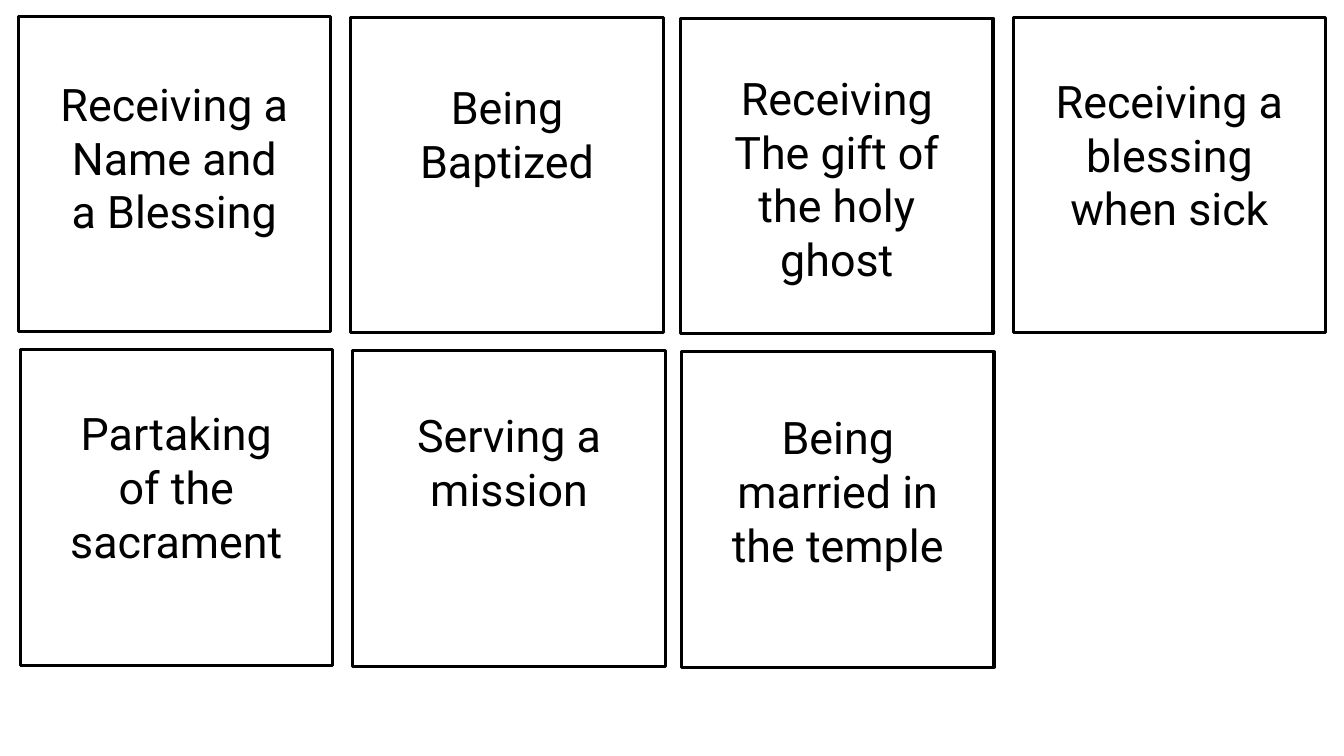
"""Build a slide of seven square cards naming church ordinances and milestones."""
from dataclasses import dataclass

from pptx import Presentation
from pptx.dml.color import RGBColor
from pptx.enum.shapes import MSO_SHAPE
from pptx.enum.text import MSO_AUTO_SIZE, PP_ALIGN
from pptx.util import Inches, Pt

RECTANGLE = MSO_SHAPE.RECTANGLE
GROW = MSO_AUTO_SIZE.SHAPE_TO_FIT_TEXT
CENTER = PP_ALIGN.CENTER


@dataclass(frozen=True)
class Theme:
    """Colours, font and sizes of the cards."""
    ink: RGBColor = RGBColor(0, 0, 0)
    font: str = "Roboto"
    label_size: Pt = Pt(32)
    border: Pt = Pt(2.25)


theme = Theme()
CARD_WIDTH, CARD_HEIGHT = 3.1, 3.13
LINE_HEIGHT, TEXT_PADDING = 0.54, 0.1

# label, card left, card top, label top, label width, label lines
cards = [
    ("Receiving a Name and a Blessing", 0.18, 0.16, 0.71, 2.56, 3),
    ("Being Baptized", 3.48, 0.17, 0.74, 2.56, 2),
    ("Receiving The gift of the holy ghost", 6.75, 0.18, 0.65, 2.78, 4),
    ("Receiving a blessing when sick", 10.05, 0.17, 0.68, 2.56, 3),
    ("Partaking of the sacrament", 0.2, 3.47, 3.98, 2.56, 3),
    ("Serving a mission", 3.5, 3.48, 4, 2.56, 2),
    ("Being married in the temple", 6.76, 3.49, 4.02, 2.56, 4),
]

presentation = Presentation()
presentation.slide_width = Inches(13.33)
presentation.slide_height = Inches(7.5)
slide = presentation.slides.add_slide(presentation.slide_layouts[6])

for _, left, top, *_ in cards:
    card = slide.shapes.add_shape(
        RECTANGLE, Inches(left), Inches(top), Inches(CARD_WIDTH), Inches(CARD_HEIGHT))
    card.shadow.inherit = False
    card.fill.background()
    card.line.color.rgb = theme.ink
    card.line.width = theme.border

for wording, left, _, label_top, label_width, lines in cards:
    label_left = left + (CARD_WIDTH - label_width) / 2
    label = slide.shapes.add_textbox(
        Inches(label_left), Inches(label_top),
        Inches(label_width), Inches(TEXT_PADDING + LINE_HEIGHT * lines))
    label.text_frame.word_wrap = True
    label.text_frame.auto_size = GROW
    paragraph = label.text_frame.paragraphs[0]
    paragraph.alignment = CENTER
    run = paragraph.add_run()
    run.text = wording
    run.font.color.rgb = theme.ink
    for attribute, value in {"name": theme.font, "size": theme.label_size}.items():
        setattr(run.font, attribute, value)

presentation.save("out.pptx")
